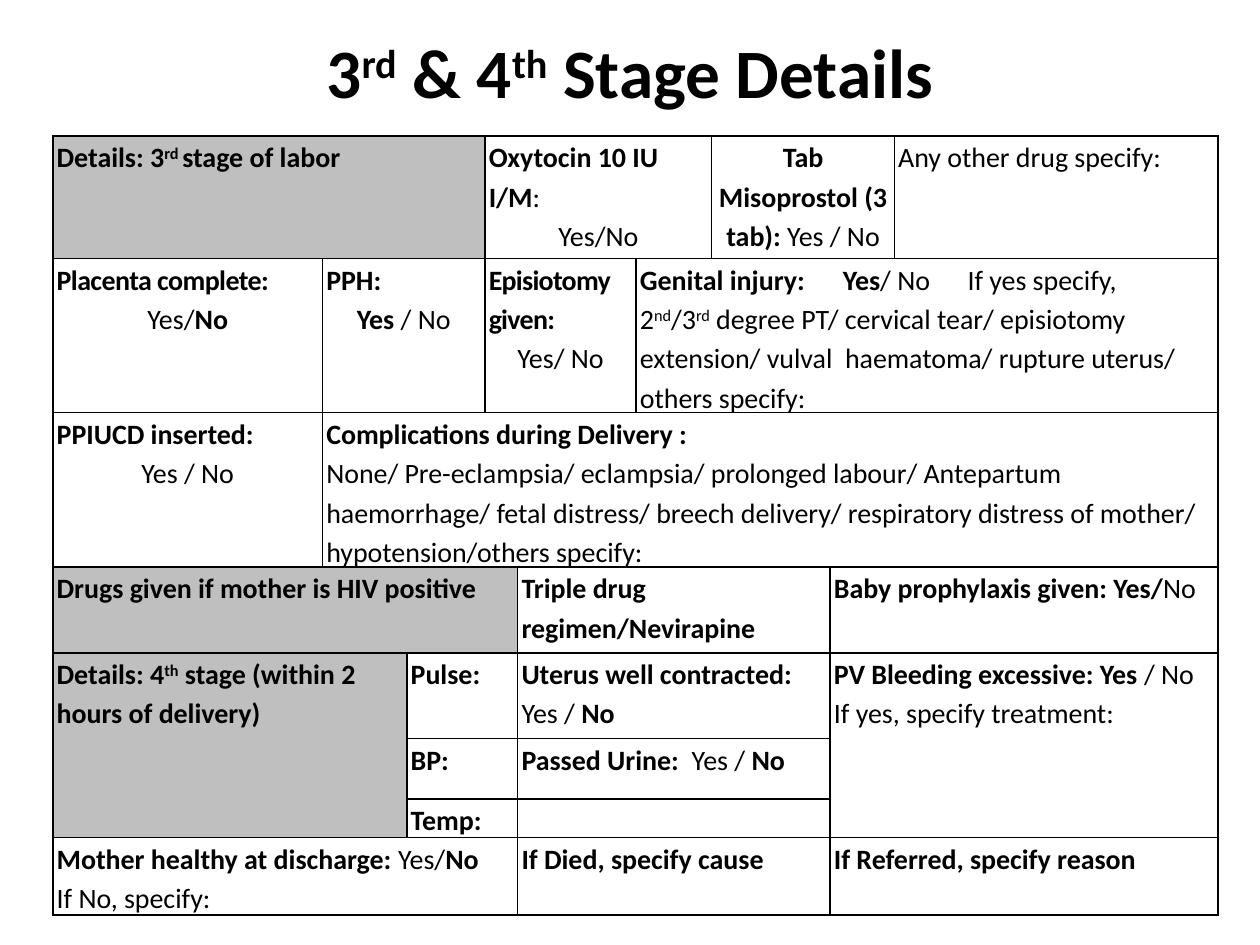
from lxml import etree
from pptx import Presentation
from pptx import util as u
from pptx.dml.color import RGBColor
from pptx.enum import text
from pptx.oxml import parse_xml
from pptx.oxml.ns import qn

hues = {"ink": "000000", "head": "BFBFBF"}
font = "Calibri"
size = 16


def write(para, line, size, tight=0):
    """Write a line in which *...* is bold and ^...^ is superscript."""
    marks = []
    for i, part in enumerate(line.split("*")):
        for j, bit in enumerate(part.split("^")):
            if bit:
                marks.append((bit, i % 2 == 1, j % 2 == 1))
    for bit, bold, high in marks:
        run = para.add_run()
        run.text = bit
        run.font.name = font
        run.font.size = u.Pt(size)
        run.font.bold = bold
        run.font.color.rgb = RGBColor.from_string(hues["ink"])
        props = run.font._element
        if high:
            props.set("baseline", "30000")
        if tight and bold:
            props.set("spc", str(tight))


def frame(cell):
    """Draw the four borders of a cell."""
    props = cell._tc.get_or_add_tcPr()
    for side in ("lnL", "lnR", "lnT", "lnB"):
        props.append(parse_xml(
            '<a:%s xmlns:a="http://schemas.openxmlformats.org/drawingml/2006/main" w="%d">'
            '<a:solidFill><a:srgbClr val="%s"/></a:solidFill></a:%s>'
            % (side, u.Pt(1), hues["ink"], side)))


deck = Presentation()
deck.slide_width = u.Inches(10)
deck.slide_height = u.Inches(7.5)
slide = deck.slides.add_slide(deck.slide_layouts[6])

# Title
box = slide.shapes.add_textbox(u.Inches(0.5), u.Inches(0.3), u.Inches(9), u.Inches(0.53))
body = box.text_frame
body.word_wrap = True
body.vertical_anchor = text.MSO_ANCHOR.MIDDLE
body.paragraphs[0].alignment = text.PP_ALIGN.CENTER
write(body.paragraphs[0], "*3^rd^ & 4^th^ Stage Details*", 39.6)

# Table grid
cols = [2.14, 0.67, 0.62, 0.26, 0.94, 0.6, 0.94, 0.51, 2.57]
rows = [0.97, 0.97, 0.39, 0.68, 0.68, 0.48, 0.1, 0.58]
holder = slide.shapes.add_table(len(rows), len(cols), u.Inches(0.42), u.Inches(1.08),
                                u.Inches(9.25), u.Inches(6.19))
table = holder.table
table.first_row = False
table.horz_banding = False
for col, wide in zip(table.columns, cols):
    col.width = u.Inches(wide)
for row, high in zip(table.rows, rows):
    row.height = u.Inches(high)
holder.height = u.Inches(6.19)

for cell in table.iter_cells():
    frame(cell)
    cell.fill.background()
    cell.margin_left = cell.margin_right = u.Inches(0.03)
    cell.margin_top = cell.margin_bottom = 0

# Form fields: row, column, rows spanned, columns spanned, lines (~ centres a line)
fields = [
    (0, 0, 1, 3, ["*Details: 3^rd ^stage of labor*"]),
    (0, 3, 1, 3, ["*Oxytocin 10 IU I/M*:", "~Yes/No"]),
    (0, 6, 1, 2, ["~*Tab Misoprostol (3 tab):* Yes / No"]),
    (0, 8, 1, 1, ["Any other drug specify:"]),
    (1, 0, 1, 1, ["*Placenta complete:*", "~Yes/*No*"]),
    (1, 1, 1, 2, ["*PPH:*", "~*Yes* / No"]),
    (1, 3, 1, 2, ["*Episiotomy given:*", "~Yes/ No"]),
    (1, 5, 1, 4, ["*Genital injury:\tYes*/ No\tIf yes specify,",
                  "2^nd^/3^rd^ degree PT/ cervical tear/ episiotomy extension/ "
                  "vulval  haematoma/ rupture uterus/ others specify:"]),
    (2, 0, 1, 1, ["*PPIUCD inserted:*", "~Yes / No"]),
    (2, 1, 1, 8, ["*Complications during Delivery :*",
                  "None/ Pre-eclampsia/ eclampsia/ prolonged labour/ Antepartum "
                  "haemorrhage/ fetal distress/ breech delivery/ respiratory distress "
                  "of mother/ hypotension/others specify:"]),
    (3, 0, 1, 4, ["*Drugs given if mother is HIV positive*"]),
    (3, 4, 1, 3, ["*Triple drug regimen/Nevirapine*"]),
    (3, 7, 1, 2, ["*Baby prophylaxis given: Yes/*No"]),
    (4, 0, 3, 2, ["*Details: 4^th^ stage (within 2 hours of delivery)*"]),
    (4, 2, 1, 2, ["*Pulse:*"]),
    (4, 4, 1, 3, ["*Uterus well contracted: *Yes / *No*"]),
    (4, 7, 3, 2, ["*PV Bleeding excessive: Yes* / No", "If yes, specify treatment:"]),
    (5, 2, 1, 2, ["*BP:*"]),
    (5, 4, 1, 3, ["*Passed Urine: * Yes / *No*"]),
    (6, 2, 1, 2, ["*Temp:*"]),
    (6, 4, 1, 3, []),
    (7, 0, 1, 4, ["*Mother healthy at discharge: *Yes/*No*", "If No, specify:"]),
    (7, 4, 1, 3, ["*If Died, specify cause*"]),
    (7, 7, 1, 2, ["*If Referred, specify reason*"]),
]
heads = {(0, 0), (3, 0), (4, 0)}
tight = {(1, 0): -30, (1, 3): -40}
stops = [1.61, 2.6]

for top, left, down, wide, lines in fields:
    cell = table.cell(top, left)
    if down * wide > 1:
        cell.merge(table.cell(top + down - 1, left + wide - 1))
    if (top, left) in heads:
        cell.fill.solid()
        cell.fill.fore_color.rgb = RGBColor.from_string(hues["head"])
    body = cell.text_frame
    for i, line in enumerate(lines):
        para = body.paragraphs[0] if i == 0 else body.add_paragraph()
        para.line_spacing = 1.15
        if line.startswith("~"):
            para.alignment = text.PP_ALIGN.CENTER
        write(para, line.lstrip("~"), size, 0 if i else tight.get((top, left), 0))
        if "\t" in line:
            tabs = etree.SubElement(para._p.get_or_add_pPr(), qn("a:tabLst"))
            for stop in stops:
                etree.SubElement(tabs, qn("a:tab"), pos=str(u.Inches(stop)), algn="l")

deck.save("out.pptx")
